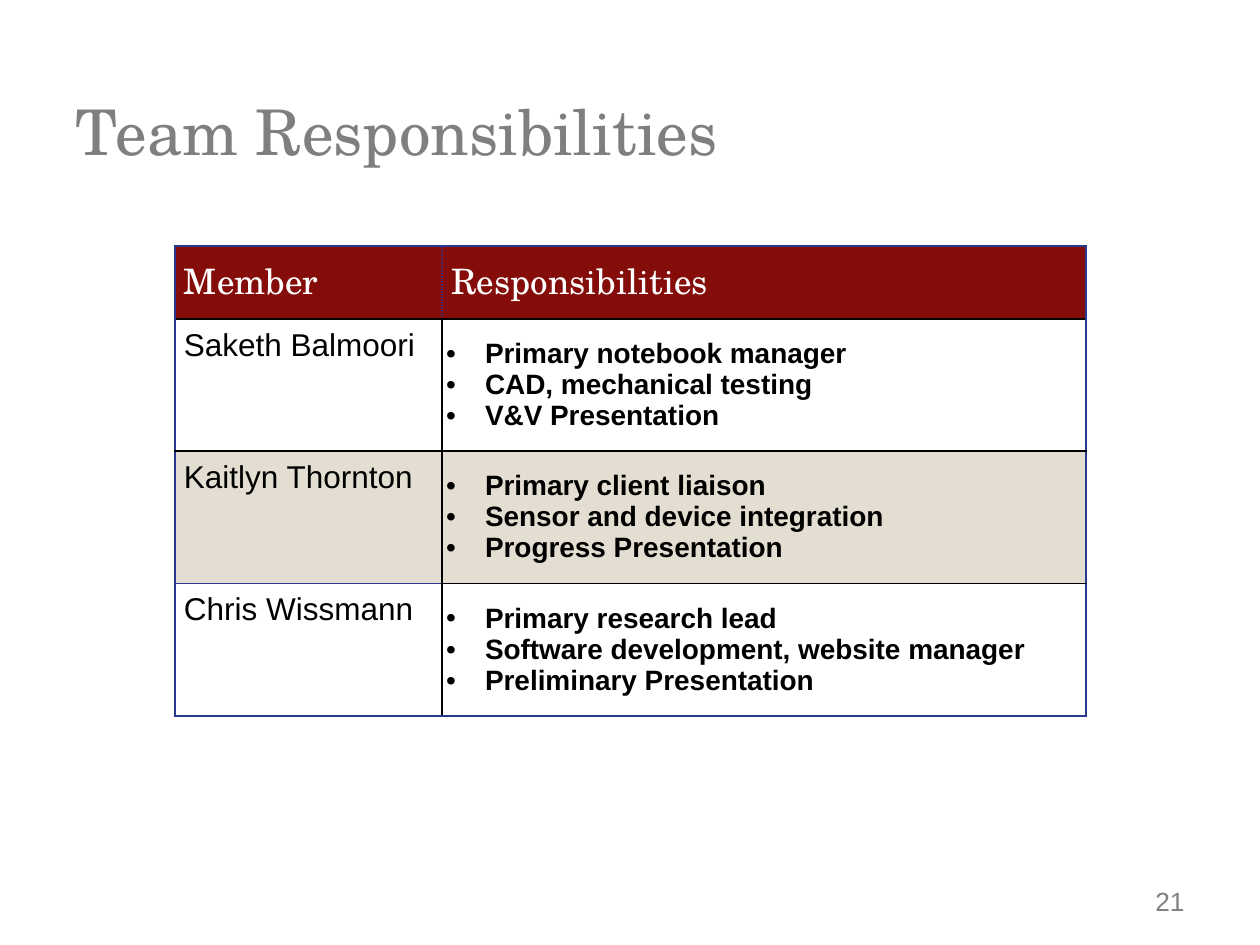
from lxml import etree
from pptx import Presentation
from pptx.dml.color import RGBColor
from pptx.enum.text import MSO_ANCHOR as Anchor, PP_ALIGN as Align
from pptx.oxml.ns import qn
from pptx.util import Inches, Pt

TITLE = "Team Responsibilities"
PAGE = "21"
HEADINGS = ("Member", "Responsibilities")
TEAM = [
    ("Saketh Balmoori",
     ("Primary notebook manager", "CAD, mechanical testing", "V&V Presentation")),
    ("Kaitlyn Thornton",
     ("Primary client liaison", "Sensor and device integration", "Progress Presentation")),
    ("Chris Wissmann",
     ("Primary research lead", "Software development, website manager",
      "Preliminary Presentation")),
]
COLUMN_WIDTHS = (2.12, 5.11)
HEADING_HEIGHT, MEMBER_HEIGHT = 0.58, 1.05
SERIF, SANS = "TeX Gyre Schola", "Arial"
BLACK, WHITE, BLUE, RED, BEIGE = "000000", "FFFFFF", "2A3990", "840C09", "E3DED1"
BULLET_INDENT = Inches(0.31)


def rgb(color):
    """Turn a hex string into a colour."""
    return RGBColor.from_string(color)


def add_text(paragraph, text, font, size, color, bold=False):
    """Add one formatted run to a paragraph."""
    run = paragraph.add_run()
    run.text = text
    run.font.name, run.font.size, run.font.bold = font, Pt(size), bold
    run.font.color.rgb = rgb(color)


def add_box(slide, place, text, font, size, color, align):
    """Add a one-line text box centred vertically."""
    frame = slide.shapes.add_textbox(*map(Inches, place)).text_frame
    frame.word_wrap = True
    frame.vertical_anchor = Anchor.MIDDLE
    frame.paragraphs[0].alignment = align
    add_text(frame.paragraphs[0], text, font, size, color)


def style_cell(cell, fill, margin, borders):
    """Set the fill, margins and left, right, top and bottom borders of a cell."""
    cell.margin_left = cell.margin_right = Inches(margin)
    cell.margin_top = cell.margin_bottom = Inches(margin)
    cell.fill.solid()
    cell.fill.fore_color.rgb = rgb(fill)
    properties = cell._tc.get_or_add_tcPr()
    for position, (side, (color, width, dash)) in enumerate(zip("LRTB", borders)):
        line = etree.Element(qn(f"a:ln{side}"), w=str(Pt(width)))
        solid = etree.SubElement(line, qn("a:solidFill"))
        etree.SubElement(solid, qn("a:srgbClr"), val=color)
        etree.SubElement(line, qn("a:prstDash"), val=dash)
        properties.insert(position, line)


def add_duties(cell, duties):
    """Fill a cell with a bulleted list."""
    cell.vertical_anchor = Anchor.MIDDLE
    for index, duty in enumerate(duties):
        frame = cell.text_frame
        paragraph = frame.add_paragraph() if index else frame.paragraphs[0]
        properties = paragraph._p.get_or_add_pPr()
        properties.set("marL", str(BULLET_INDENT))
        properties.set("indent", str(-BULLET_INDENT))
        etree.SubElement(properties, qn("a:buFont"), typeface=SANS)
        etree.SubElement(properties, qn("a:buChar"), char="•")
        add_text(paragraph, duty, SANS, 16, BLACK, bold=True)


def add_team_table(slide):
    """Add the table of members and their responsibilities."""
    heights = [HEADING_HEIGHT] + [MEMBER_HEIGHT] * len(TEAM)
    table = slide.shapes.add_table(
        len(heights), len(COLUMN_WIDTHS), Inches(1.39), Inches(1.95),
        Inches(sum(COLUMN_WIDTHS)), Inches(sum(heights))).table
    for column, width in zip(table.columns, COLUMN_WIDTHS):
        column.width = Inches(width)
    for row, height in zip(table.rows, heights):
        row.height = Inches(height)

    black, blue = (BLACK, 1, "solid"), (BLUE, 1, "solid")
    thick, dotted = (BLUE, 1.5, "solid"), (BLUE, 1, "sysDot")
    heading_sides = ((thick, dotted), (dotted, thick))
    for column, (heading, sides) in enumerate(zip(HEADINGS, heading_sides)):
        cell = table.cell(0, column)
        style_cell(cell, RED, 0.07, (*sides, thick, black))
        add_text(cell.text_frame.paragraphs[0], heading, SERIF, 20, WHITE)

    last = len(TEAM)
    for row, (member, duties) in enumerate(TEAM, 1):
        fill = WHITE if row % 2 else BEIGE
        top = blue if row == last else black
        bottom = {last - 1: blue, last: thick}.get(row, black)
        name_cell, duty_cell = table.cell(row, 0), table.cell(row, 1)
        style_cell(name_cell, fill, 0.07, (blue, black, top, bottom))
        add_text(name_cell.text_frame.paragraphs[0], member, SANS, 18, BLACK)
        duty_bottom = thick if row == last else black
        style_cell(duty_cell, fill, 0.03, (black, blue, black, duty_bottom))
        add_duties(duty_cell, duties)


def main():
    """Build the slide and save it."""
    deck = Presentation()
    deck.slide_width, deck.slide_height = Inches(10), Inches(7.5)
    slide = deck.slides.add_slide(deck.slide_layouts[6])
    add_box(slide, (7.06, 6.95, 2.44, 0.4), PAGE, SANS, 15, "808080", Align.RIGHT)
    add_box(slide, (0.5, 0.67, 9, 0.73), TITLE, SERIF, 36, "7F7F7F", Align.LEFT)
    add_team_table(slide)
    deck.save("out.pptx")


if __name__ == "__main__":
    main()
